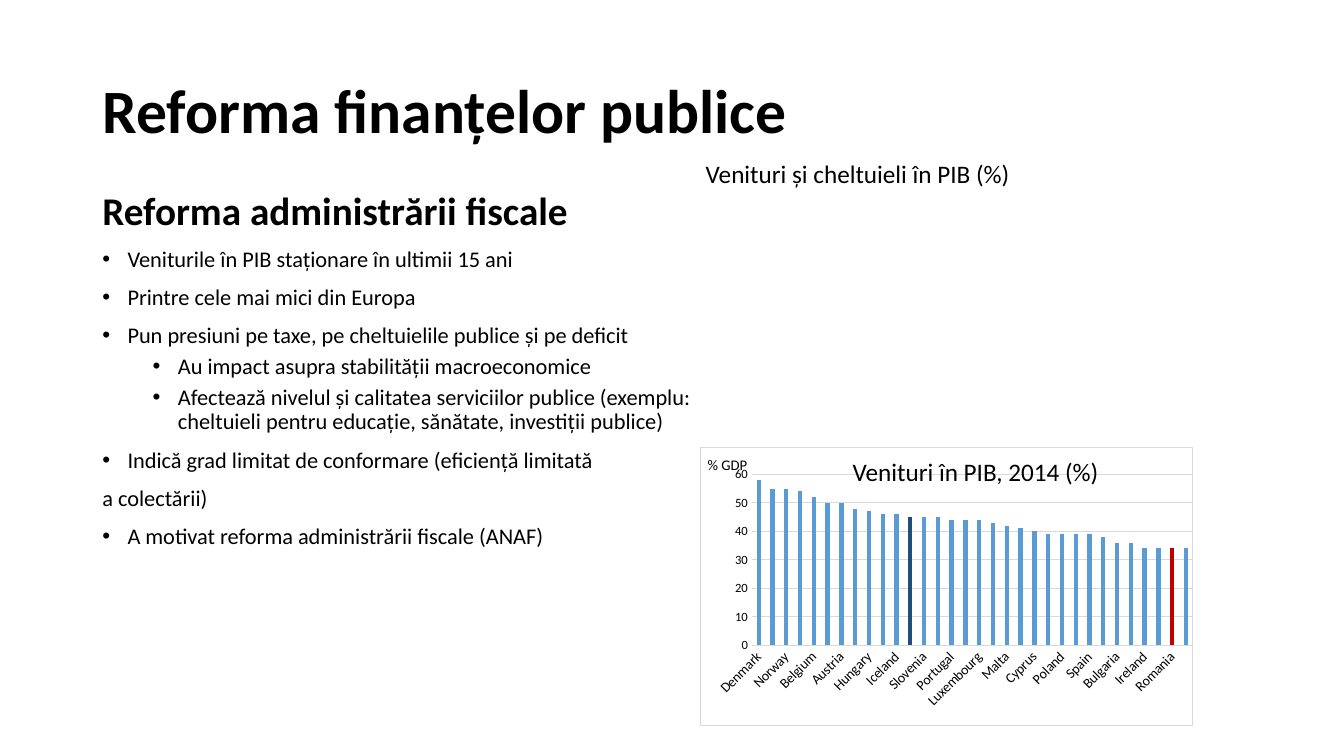
from lxml import etree
from pptx import Presentation
from pptx.chart.data import CategoryChartData
from pptx.dml.color import RGBColor
from pptx.enum.chart import XL_CHART_TYPE, XL_TICK_MARK
from pptx.enum.text import MSO_ANCHOR, MSO_AUTO_SIZE, PP_ALIGN
from pptx.oxml import parse_xml
from pptx.oxml.ns import nsdecls, qn
from pptx.util import Pt

COLUMN = XL_CHART_TYPE.COLUMN_CLUSTERED
NO_TICK = XL_TICK_MARK.NONE
MIDDLE = MSO_ANCHOR.MIDDLE
NO_FIT = MSO_AUTO_SIZE.NONE
LEFT = PP_ALIGN.LEFT

FONT = "Calibri"
COLORS = {"text": "000000", "paper": "FFFFFF", "grid": "D9D9D9",
          "bar": "5B9BD5", "EU28": "1F4E79", "Romania": "C00000"}

POINTS = [
    (0, "Veniturile în PIB staționare în ultimii 15 ani"),
    (0, "Printre cele mai mici din Europa"),
    (0, "Pun presiuni pe taxe, pe cheltuielile publice și pe deficit"),
    (1, "Au impact asupra stabilității macroeconomice"),
    (1, "Afectează nivelul și calitatea serviciilor publice (exemplu: "
        "cheltuieli pentru educație, sănătate, investiții publice)"),
    (0, "Indică grad limitat de conformare (eficiență limitată"),
    (None, "a colectării)"),
    (0, "A motivat reforma administrării fiscale (ANAF)"),
]

REVENUE = {
    "Denmark": 58, "Finland": 55, "Norway": 55, "France": 54,
    "Belgium": 52, "Sweden": 50, "Austria": 50, "Italy": 48,
    "Hungary": 47, "Greece": 46, "Iceland": 46, "EU28": 45,
    "Slovenia": 45, "Germany": 45, "Portugal": 44, "Netherlands": 44,
    "Luxembourg": 44, "Croatia": 43, "Malta": 42, "Czech Republic": 41,
    "Cyprus": 40, "Slovakia": 39, "Poland": 39, "Estonia": 39,
    "Spain": 39, "United Kingdom": 38, "Bulgaria": 36, "Latvia": 36,
    "Ireland": 34, "Lithuania": 34, "Romania": 34, "Switzerland": 34,
}


def rgb(name):
    return RGBColor.from_string(COLORS[name])


def style_font(font, size, bold=False):
    font.name = FONT
    font.size = Pt(size)
    font.bold = bold
    font.color.rgb = rgb("text")


def add_run(p, text, size, bold=False):
    r = p.add_run()
    r.text = text
    style_font(r.font, size, bold)


def add_title(s, text):
    sp = s.shapes.title
    sp.left, sp.top, sp.width, sp.height = Pt(66), Pt(29), Pt(828), Pt(104.4)
    tf = sp.text_frame
    tf.auto_size = NO_FIT
    tf.vertical_anchor = MIDDLE
    p = tf.paragraphs[0]
    p.alignment = LEFT
    p.line_spacing = 0.9
    add_run(p, text, 44, True)


def add_textbox(s, left, top, width, height):
    tf = s.shapes.add_textbox(Pt(left), Pt(top), Pt(width), Pt(height)).text_frame
    tf.word_wrap = True
    return tf


def add_label(s, text, left, top, width):
    add_run(add_textbox(s, left, top, width, 29).paragraphs[0], text, 18)


def set_bullet(p, level):
    pPr = p._p.get_or_add_pPr()
    pPr.set("marL", str(Pt(18 + 36 * level)))
    pPr.set("indent", str(Pt(-18)))
    etree.SubElement(pPr, qn("a:buFont")).set("typeface", "Arial")
    etree.SubElement(pPr, qn("a:buChar")).set("char", "•")


def add_body(s, heading, points):
    tf = add_textbox(s, 66, 133.2, 455, 361.4)
    p = tf.paragraphs[0]
    p.line_spacing = 0.9
    p.space_before = Pt(10)
    add_run(p, heading, 28, True)
    for level, text in points:
        p = tf.add_paragraph()
        p.level = level or 0
        p.line_spacing = 0.9
        p.space_before = Pt(5 if level else 10)
        if level is not None:
            set_bullet(p, level)
        add_run(p, text, 16)


def set_layout(parent, index, **values):
    for old in parent.findall(qn("c:layout")):
        parent.remove(old)
    layout = etree.Element(qn("c:layout"))
    manual = etree.SubElement(layout, qn("c:manualLayout"))
    for tag, val in values.items():
        etree.SubElement(manual, qn("c:" + tag)).set("val", str(val))
    parent.insert(index, layout)


def style_frame(chart):
    spPr = parse_xml(
        f'<c:spPr {nsdecls("c", "a")}>'
        f'<a:solidFill><a:srgbClr val="{COLORS["paper"]}"/></a:solidFill>'
        f'<a:ln w="{Pt(0.75)}"><a:solidFill><a:srgbClr val="{COLORS["grid"]}"/>'
        '</a:solidFill></a:ln></c:spPr>')
    chart._chartSpace.find(qn("c:txPr")).addprevious(spPr)


def style_line(line):
    line.color.rgb = rgb("grid")
    line.width = Pt(0.75)


def style_axis(axis, size):
    axis.major_tick_mark = axis.minor_tick_mark = NO_TICK
    style_font(axis.tick_labels.font, size)


def style_country_axis(axis):
    style_axis(axis, 10)
    style_line(axis.format.line)
    bodyPr = axis._element.find(qn("c:txPr")).find(qn("a:bodyPr"))
    bodyPr.set("rot", "-2700000")
    skip = etree.Element(qn("c:tickLblSkip"))
    skip.set("val", "2")
    axis._element.find(qn("c:noMultiLvlLbl")).addprevious(skip)
    add_run(axis.axis_title.text_frame.paragraphs[0], "% GDP", 10.5)
    set_layout(axis.axis_title._element, 1,
               xMode="edge", yMode="edge", x=0.01, y=0.02)


def style_percent_axis(axis):
    style_axis(axis, 9)
    axis.minimum_scale, axis.maximum_scale, axis.major_unit = 0, 60, 10
    axis.format.line.fill.background()
    style_line(axis.major_gridlines.format.line)


def add_revenue_chart(s, revenue):
    data = CategoryChartData()
    data.categories = list(revenue)
    data.add_series("Series 1", list(revenue.values()))
    chart = s.shapes.add_chart(
        COLUMN, Pt(499.7), Pt(319), Pt(352.8), Pt(199.4), data).chart
    chart.has_title = chart.has_legend = False
    style_font(chart.font, 10)
    style_frame(chart)
    style_country_axis(chart.category_axis)
    style_percent_axis(chart.value_axis)
    set_layout(chart._chartSpace.chart.plotArea, 0, layoutTarget="inner",
               xMode="edge", yMode="edge", x=0.105, y=0.098, w=0.895, h=0.615)
    plot = chart.plots[0]
    plot.vary_by_categories = False
    plot.gap_width, plot.overlap = 219, -27
    series = plot.series[0]
    series.format.fill.solid()
    series.format.fill.fore_color.rgb = rgb("bar")
    for country in ("EU28", "Romania"):
        fill = series.points[list(revenue).index(country)].format.fill
        fill.solid()
        fill.fore_color.rgb = rgb(country)


def main():
    prs = Presentation()
    prs.slide_width, prs.slide_height = Pt(960), Pt(540)
    s = prs.slides.add_slide(prs.slide_layouts[5])
    add_title(s, "Reforma finanțelor publice")
    add_body(s, "Reforma administrării fiscale", POINTS)
    add_revenue_chart(s, REVENUE)
    add_label(s, "Venituri și cheltuieli în PIB (%)", 497, 109.4, 353.5)
    add_label(s, "Venituri în PIB, 2014 (%)", 602, 322.6, 249)
    prs.save("out.pptx")


if __name__ == "__main__":
    main()
